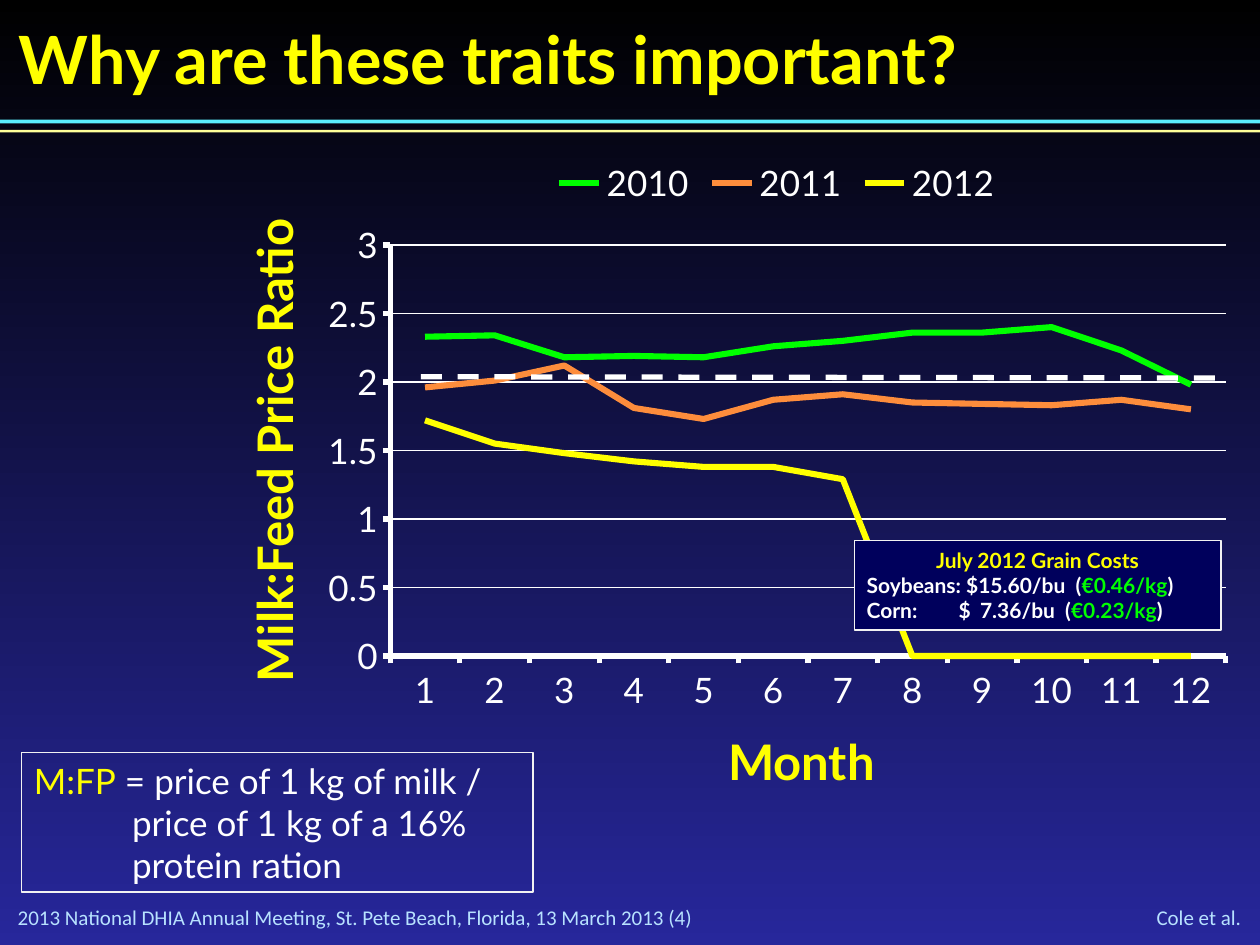
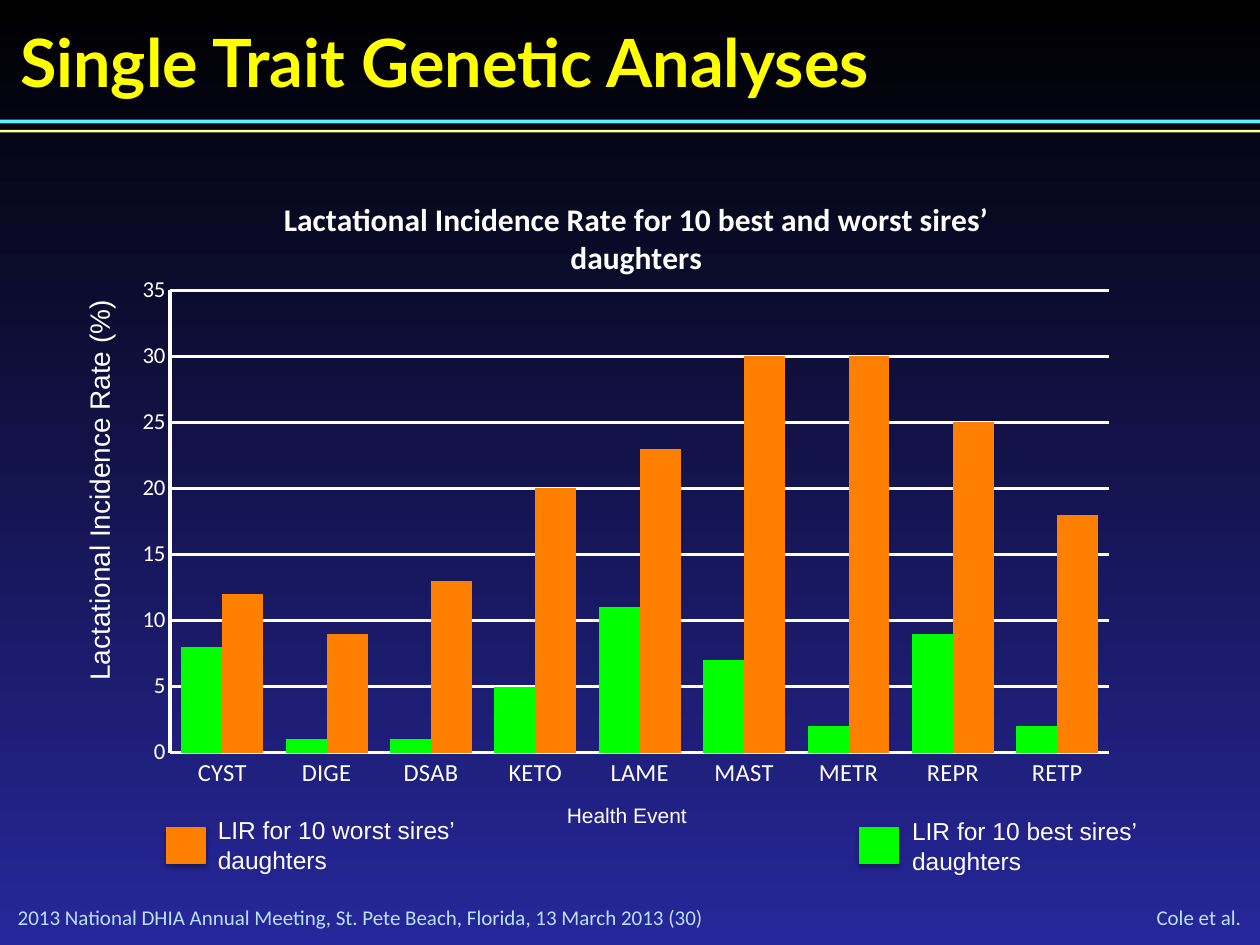
import pptx
import pptx.util
import pptx.chart.data
import pptx.dml.color
import pptx.enum.chart
import pptx.enum.dml
import pptx.enum.shapes
import pptx.enum.text
import pptx.oxml
import pptx.oxml.ns
from pptx.util import Inches

COLORS = {
    "white": "FFFFFF", "yellow": "FFFF00", "green": "00FF00", "peach": "FD8D3C",
    "orange": "FF8000", "navy": "00005C", "frame": "F2F2F2", "footer": "B8E2FF",
    "cyan band": "5BEFFF", "cream band": "FFFF99", "top": "000000", "bottom": "27279B",
}
RGB = {name: pptx.dml.color.RGBColor.from_string(code) for name, code in COLORS.items()}
NAMESPACES = pptx.oxml.ns.nsdecls("a", "c")
qn = pptx.oxml.ns.qn
ALIGN = pptx.enum.text.PP_ALIGN
RECTANGLE = pptx.enum.shapes.MSO_SHAPE.RECTANGLE
TICKS = pptx.enum.chart.XL_TICK_MARK


def write(box, paragraphs, size, font, align=ALIGN.LEFT, bold=False):
    """Fill a box with paragraphs, each a list of (text, colour name) runs."""
    frame = box.text_frame
    frame.word_wrap = True
    for number, pieces in enumerate(paragraphs):
        para = frame.add_paragraph() if number else frame.paragraphs[0]
        para.alignment = align
        for text, color in pieces:
            span = para.add_run()
            span.text = text
            span.font.size = pptx.util.Pt(size)
            span.font.name = font
            span.font.bold = bold
            span.font.color.rgb = RGB[color]


def style_chart(chart, plot_area, top_value, step, tick, axis_width, grid_width, series_colors):
    """Set font, axes, plot position (fractions of the chart) and series colours."""
    chart.font.size = pptx.util.Pt(10)
    chart.font.name = "Calibri"
    chart.font.color.rgb = RGB["white"]
    chart_space = chart.element
    no_fill = f"<c:spPr {NAMESPACES}><a:noFill/><a:ln><a:noFill/></a:ln></c:spPr>"
    chart_space.find(qn("c:txPr")).addprevious(pptx.oxml.parse_xml(no_fill))

    area = chart_space.find(".//" + qn("c:plotArea"))
    for layout_element in area.findall(qn("c:layout")):
        area.remove(layout_element)
    edges = "".join(f'<c:{tag} val="{value}"/>' for tag, value in zip("xywh", plot_area))
    area.insert(0, pptx.oxml.parse_xml(
        f'<c:layout {NAMESPACES}><c:manualLayout><c:layoutTarget val="inner"/>'
        f'<c:xMode val="edge"/><c:yMode val="edge"/>{edges}</c:manualLayout></c:layout>'))
    area.append(pptx.oxml.parse_xml(no_fill))

    for axis in (chart.category_axis, chart.value_axis):
        axis.major_tick_mark = tick
        axis.minor_tick_mark = TICKS.NONE
        axis.format.line.color.rgb = RGB["white"]
        axis.format.line.width = pptx.util.Pt(axis_width)
    chart.value_axis.minimum_scale = 0
    chart.value_axis.maximum_scale = top_value
    chart.value_axis.major_unit = step
    chart.value_axis.has_major_gridlines = True
    grid = chart.value_axis.major_gridlines.format.line
    grid.color.rgb = RGB["white"]
    grid.width = pptx.util.Pt(grid_width)
    chart.plots[0].vary_by_categories = False
    for series, color in zip(chart.plots[0].series, series_colors):
        if chart.chart_type == pptx.enum.chart.XL_CHART_TYPE.LINE:
            series.smooth = False
            series.marker.style = pptx.enum.chart.XL_MARKER_STYLE.NONE
            series.format.line.color.rgb = RGB[color]
            series.format.line.width = pptx.util.Pt(3.5)
        else:
            series.format.fill.solid()
            series.format.fill.fore_color.rgb = RGB[color]


deck = pptx.Presentation()
deck.slide_width, deck.slide_height = Inches(10), Inches(7.5)

# Shared background: black fading down to blue
background = deck.slide_master.background.fill
background.gradient()
background.gradient_angle = 270
for stop, color, position in zip(background.gradient_stops, ("top", "bottom"), (0, 1)):
    stop.color.rgb = RGB[color]
    stop.position = position

# Shared layout: title place and two bands
layout = deck.slide_layouts.get_by_name("Title Only")
for placeholder in list(layout.placeholders):
    if placeholder.placeholder_format.idx != 0:
        layout.shapes.element.remove(placeholder.element)

price_page = deck.slides.add_slide(layout)
trait_page = deck.slides.add_slide(layout)
for color, top, height in (("cyan band", 0.95, 0.03), ("cream band", 1.03, 0.02)):
    band = price_page.shapes.add_shape(RECTANGLE, 0, Inches(top), Inches(10), Inches(height))
    band.shadow.inherit = False
    band.fill.solid()
    band.fill.fore_color.rgb = RGB[color]
    band.line.fill.background()
    layout.shapes.element.append(band.element)

# Titles and footers
for page, title, left, top, number in (
    (price_page, "Why are these traits important?", 0.15, 0.14, 4),
    (trait_page, "Single Trait Genetic Analyses", 0.16, 0.16, 30),
):
    title_box = page.shapes.title
    title_box.left, title_box.top = Inches(left), Inches(top)
    title_box.width, title_box.height = Inches(9), Inches(0.64)
    meeting = f"2013 National DHIA Annual Meeting, St. Pete Beach, Florida, 13 March 2013 ({number})"
    meeting_box = page.shapes.add_textbox(Inches(0.14), Inches(7.18), Inches(5.78), Inches(0.2))
    author_box = page.shapes.add_textbox(Inches(8.72), Inches(7.17), Inches(1.13), Inches(0.21))
    write(title_box, [[(title, "yellow")]], 38, "Lato", bold=True)
    write(meeting_box, [[(meeting, "footer")]], 12, "Calibri")
    write(author_box, [[("Cole et al.", "footer")]], 12, "Calibri", ALIGN.RIGHT)
    for box in (title_box, meeting_box, author_box):
        frame = box.text_frame
        frame.margin_left = frame.margin_right = frame.margin_top = frame.margin_bottom = 0
        frame.vertical_anchor = pptx.enum.text.MSO_ANCHOR.MIDDLE

# Slide 1: milk to feed price ratio by month
price_data = pptx.chart.data.CategoryChartData()
price_data.categories = [str(month) for month in range(1, 13)]
price_data.add_series("2010", (2.33, 2.34, 2.18, 2.19, 2.18, 2.26, 2.3, 2.36, 2.36, 2.4, 2.23, 1.98))
price_data.add_series("2011", (1.96, 2.01, 2.12, 1.81, 1.73, 1.87, 1.91, 1.85, 1.84, 1.83, 1.87, 1.8))
price_data.add_series("2012", [1.72, 1.55, 1.48, 1.42, 1.38, 1.38, 1.29] + [None] * 5)
price_chart = price_page.shapes.add_chart(
    pptx.enum.chart.XL_CHART_TYPE.LINE,
    Inches(2.46), Inches(1.15), Inches(7.41), Inches(4.59), price_data).chart
style_chart(price_chart, (0.086, 0.173, 0.895, 0.711), 3, 0.5, TICKS.OUTSIDE, 3, 0.75,
            ("green", "peach", "yellow"))
price_chart.has_title = False
price_chart.has_legend = True
price_chart.legend.position = pptx.enum.chart.XL_LEGEND_POSITION.TOP
price_chart.legend.include_in_layout = False
for font in (price_chart.legend.font, price_chart.category_axis.tick_labels.font,
             price_chart.value_axis.tick_labels.font):
    font.size = pptx.util.Pt(20)
    font.name = "Lato"
    font.color.rgb = RGB["white"]
price_chart.element.find(".//" + qn("c:dispBlanksAs")).set("val", "zero")

# Axis captions
for caption, left, top, width, rotation in (
    ("Month", 3.89, 5.76, 4.94, 0),
    ("Milk:Feed Price Ratio", 0, 3.29, 4.36, 270),
):
    box = price_page.shapes.add_textbox(Inches(left), Inches(top), Inches(width), Inches(0.57))
    box.rotation = rotation
    write(box, [[(caption, "yellow")]], 28, "Lato", ALIGN.CENTER, True)

# Dashed reference line
reference = price_page.shapes.add_connector(
    pptx.enum.shapes.MSO_CONNECTOR.STRAIGHT, Inches(3.34), Inches(2.99), Inches(9.71), Inches(3))
reference.line.color.rgb = RGB["white"]
reference.line.width = pptx.util.Pt(3)
reference.line.dash_style = pptx.enum.dml.MSO_LINE.DASH
reference.element.spPr.append(pptx.oxml.parse_xml(f"<a:effectLst {NAMESPACES}/>"))

# Framed notes: ratio definition and grain costs
ratio_box = price_page.shapes.add_shape(
    RECTANGLE, Inches(0.17), Inches(5.97), Inches(4.06), Inches(1.11))
ratio_box.fill.background()
grain_box = price_page.shapes.add_shape(
    RECTANGLE, Inches(6.78), Inches(4.29), Inches(2.91), Inches(0.71))
grain_box.fill.solid()
grain_box.fill.fore_color.rgb = RGB["navy"]
for box in (ratio_box, grain_box):
    box.shadow.inherit = False
    box.line.color.rgb = RGB["frame"]
    box.line.width = pptx.util.Pt(0.75)
write(ratio_box, [
    [("M:FP", "yellow"), (" = price of 1 kg of milk /", "white")],
    [("price of 1 kg of a 16%", "white")],
    [("protein ration", "white")],
], 20, "Lato")
for para in ratio_box.text_frame.paragraphs[1:]:
    para._p.get_or_add_pPr().set("marL", str(Inches(0.78)))
write(grain_box, [
    [("July 2012 Grain Costs", "yellow")],
    [("Soybeans: $15.60/bu  (", "white"), ("€0.46/kg", "green"), (")", "white")],
    [("Corn:\t$\t7.36/bu  (", "white"), ("€0.23/kg", "green"), (")", "white")],
], 12, "Lato", bold=True)
heading, soybeans, corn = grain_box.text_frame.paragraphs
heading.alignment = ALIGN.CENTER
stops = "".join(f'<a:tab pos="{Inches(place)}" algn="l"/>' for place in (0.73, 0.9))
corn._p.get_or_add_pPr().append(
    pptx.oxml.parse_xml(f"<a:tabLst {NAMESPACES}>{stops}</a:tabLst>"))

# Slide 2: incidence rates for best and worst sires
rate_data = pptx.chart.data.CategoryChartData()
rate_data.categories = ["CYST", "DIGE", "DSAB", "KETO", "LAME", "MAST", "METR", "REPR", "RETP"]
rate_data.add_series("Series 1", (8, 1, 1, 5, 11, 7, 2, 9, 2))
rate_data.add_series("Series 2", (12, 9, 13, 20, 23, 30, 30, 25, 18))
rate_chart = trait_page.shapes.add_chart(
    pptx.enum.chart.XL_CHART_TYPE.COLUMN_CLUSTERED,
    Inches(1.02), Inches(1.37), Inches(8.06), Inches(4.95), rate_data).chart
style_chart(rate_chart, (0.041, 0.189, 0.925, 0.741), 35, 5, TICKS.NONE, 2, 2,
            ("green", "orange"))
rate_chart.has_legend = False
rate_chart.plots[0].gap_width = 55
rate_chart.plots[0].overlap = 0
rate_chart.category_axis.tick_labels.font.size = pptx.util.Pt(14)
rate_chart.value_axis.tick_labels.font.size = pptx.util.Pt(13)
rate_chart.has_title = True
rate_chart.chart_title.include_in_layout = False
title_frame = rate_chart.chart_title.text_frame
title_frame.text = "Lactational Incidence Rate for 10 best and worst sires’ daughters"
title_font = title_frame.paragraphs[0].runs[0].font
title_font.size = pptx.util.Pt(18)
title_font.name = "Calibri"
title_font.bold = True
title_font.color.rgb = RGB["white"]

# Axis captions and key labels
for text, left, top, width, height, rotation, size in (
    ("Lactational Incidence Rate (%)", -0.86, 3.64, 3.32, 0.4, 270, 16),
    ("Health Event", 4.4, 6.32, 1.69, 0.4, 0, 12),
    ("LIR for 10 worst sires’ daughters", 1.63, 6.42, 2.15, 0.57, 0, 14),
    ("LIR for 10 best sires’ daughters", 7.14, 6.43, 2.15, 0.57, 0, 14),
):
    box = trait_page.shapes.add_textbox(Inches(left), Inches(top), Inches(width), Inches(height))
    box.rotation = rotation
    write(box, [[(text, "white")]], size, "Arial")

# Key squares with a soft shadow
for color, left in (("orange", 1.32), ("green", 6.82)):
    square = trait_page.shapes.add_shape(
        RECTANGLE, Inches(left), Inches(6.57), Inches(0.31), Inches(0.28))
    square.fill.solid()
    square.fill.fore_color.rgb = RGB[color]
    square.line.color.rgb = RGB[color]
    square.line.width = pptx.util.Pt(0.75)
    square.element.spPr.append(pptx.oxml.parse_xml(
        f'<a:effectLst {NAMESPACES}><a:outerShdw blurRad="{pptx.util.Pt(3.1)}" '
        f'dist="{pptx.util.Pt(1.8)}" dir="5400000" rotWithShape="0">'
        f'<a:srgbClr val="{COLORS["top"]}"><a:alpha val="35000"/></a:srgbClr>'
        f'</a:outerShdw></a:effectLst>'))

deck.save("out.pptx")
